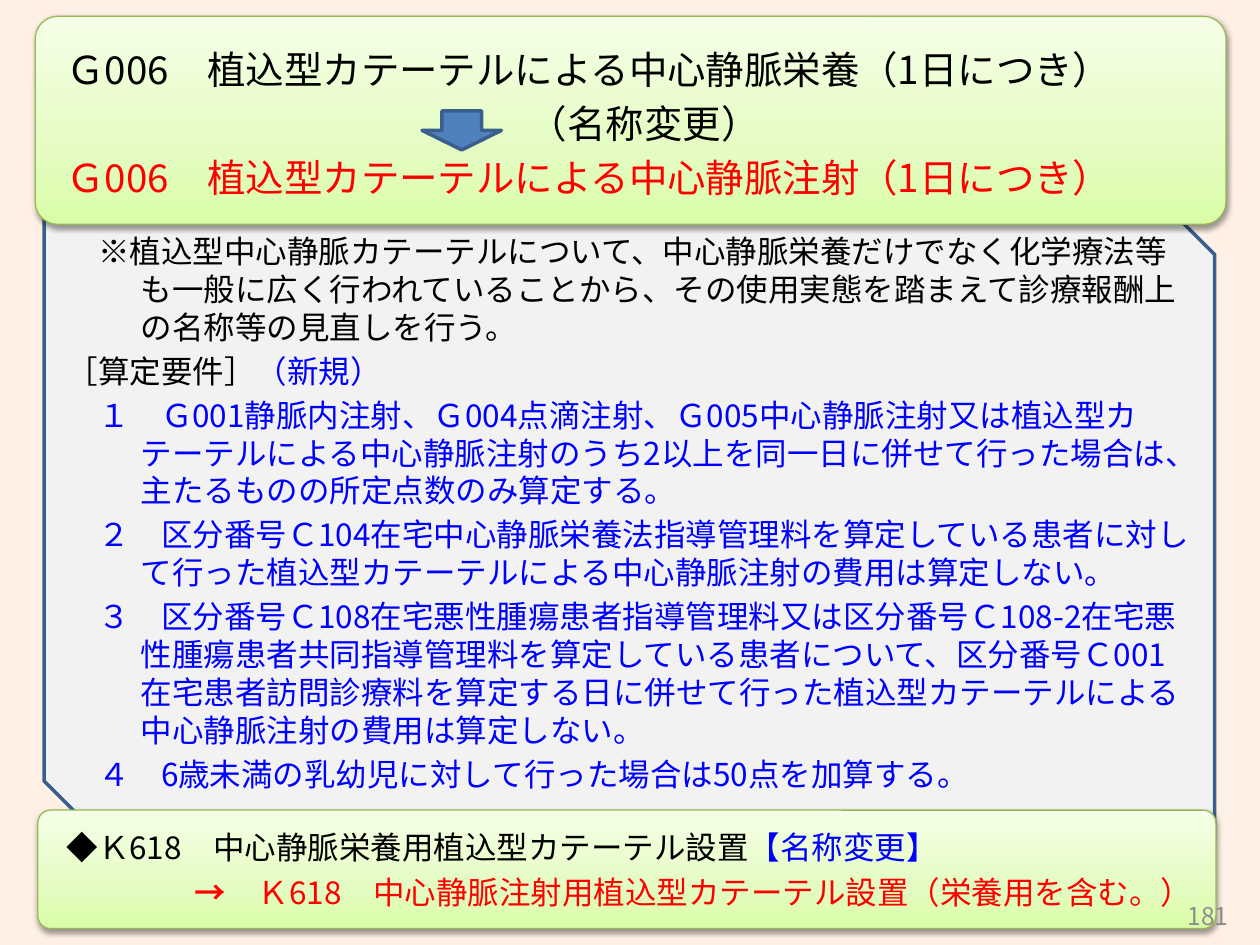
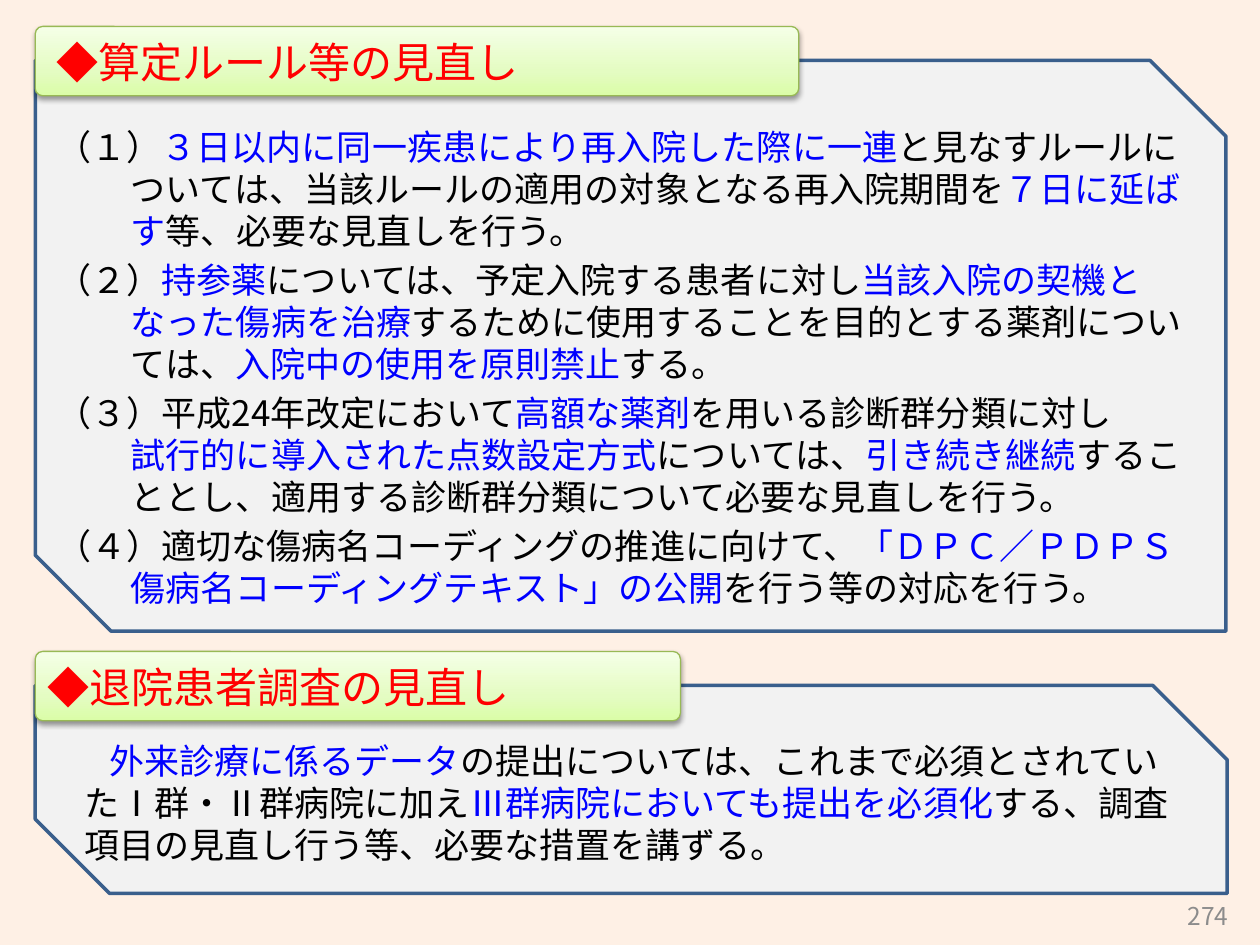
from pptx import Presentation
from pptx.dml.color import RGBColor
from pptx.enum.shapes import MSO_SHAPE
from pptx.enum.text import MSO_ANCHOR, PP_ALIGN
from pptx.oxml import parse_xml
from pptx.oxml.ns import nsdecls, qn
from pptx.util import Inches, Pt

SNIPPED = MSO_SHAPE.SNIP_2_DIAG_RECTANGLE
ROUNDED = MSO_SHAPE.ROUNDED_RECTANGLE
DOWN_ARROW = MSO_SHAPE.DOWN_ARROW
LEFT, RIGHT = PP_ALIGN.LEFT, PP_ALIGN.RIGHT
TOP, MIDDLE = MSO_ANCHOR.TOP, MSO_ANCHOR.MIDDLE

CREAM = RGBColor(0xFE, 0xF0, 0xE5)
PANEL_GRAY = RGBColor(0xF2, 0xF2, 0xF2)
NAVY = RGBColor(0x3A, 0x5F, 0x8C)
ARROW_BLUE = RGBColor(0x4F, 0x81, 0xBD)
LEAF = RGBColor(0x98, 0xB9, 0x55)
BLACK = RGBColor(0, 0, 0)
RED = RGBColor(0xFF, 0, 0)
BLUE = RGBColor(0, 0, 0xFF)
NUMBER_GRAY = RGBColor(0x8C, 0x8C, 0x8C)

FONT = "Noto Sans CJK JP"
GREEN_STOPS = ((0, "DAFDA7"), (35, "E4FCC2"), (100, "F5FFE7"))
LINE_HEIGHT = 1.2
PARA_GAP = 0.2


class Page:
    """The style of the deck and the slide being built."""

    def __init__(self, deck):
        self.slide = deck.slides.add_slide(deck.slide_layouts[6])
        background = self.slide.background.fill
        background.solid()
        background.fore_color.rgb = CREAM

    def shape(self, kind, at, line, line_width):
        shape = self.slide.shapes.add_shape(kind, *map(Inches, at))
        shape.shadow.inherit = False
        shape.line.color.rgb = line
        shape.line.width = Pt(line_width)
        return shape

    def solid(self, kind, at, color):
        shape = self.shape(kind, at, NAVY, 2)
        shape.fill.solid()
        shape.fill.fore_color.rgb = color
        return shape

    def panel(self, at, snip):
        panel = self.solid(SNIPPED, at, PANEL_GRAY)
        panel.adjustments[0] = 0
        panel.adjustments[1] = snip

    def band(self, at):
        """Rounded green gradient band with a soft shadow below it."""
        band = self.shape(ROUNDED, at, LEAF, 0.75)
        band.adjustments[0] = 0.108
        band.fill.gradient()
        band.fill.gradient_angle = 90
        properties = band._element.spPr
        stops = properties.find(".//" + qn("a:gsLst"))
        for stop in list(stops):
            stops.remove(stop)
        for position, color in GREEN_STOPS:
            stops.append(parse_xml(
                f'<a:gs {nsdecls("a")} pos="{position * 1000}">'
                f'<a:srgbClr val="{color}"/></a:gs>'))
        properties.find(qn("a:effectLst")).append(parse_xml(
            f'<a:outerShdw {nsdecls("a")} blurRad="{Pt(3.1)}" dist="{Pt(1.6)}" '
            'dir="5400000" rotWithShape="0"><a:srgbClr val="000000">'
            '<a:alpha val="38000"/></a:srgbClr></a:outerShdw>'))

    def text_box(self, at, anchor=TOP):
        box = self.slide.shapes.add_textbox(*map(Inches, at))
        box.text_frame.word_wrap = True
        box.text_frame.vertical_anchor = anchor
        return box.text_frame

    def para(self, frame, size, spans, margin=0.0, indent=0.0, before=None,
             after=0, align=LEFT):
        """Add a paragraph of (text, color[, bold]) spans; a span may end in a line break."""
        first = not frame.paragraphs[0].runs
        para = frame.paragraphs[0] if first else frame.add_paragraph()
        para.alignment = align
        para.line_spacing = Pt(size * LINE_HEIGHT)
        if before is None:
            before = 0 if first else size * PARA_GAP
        para.space_before = Pt(before)
        para.space_after = Pt(after)
        properties = para._p.get_or_add_pPr()
        properties.set("marL", str(Inches(margin)))
        properties.set("indent", str(Inches(indent)))
        for text, color, *bold in spans:
            span = para.add_run()
            span.text = text.rstrip("\n")
            span.font.size = Pt(size)
            span.font.name = FONT
            span.font.bold = bool(bold)
            span.font.color.rgb = color
            east_asian = parse_xml(f'<a:ea {nsdecls("a")} typeface="{FONT}"/>')
            span.font._element.find(qn("a:latin")).addnext(east_asian)
            if text.endswith("\n"):
                para.add_line_break()

    def number(self, number):
        frame = self.text_box((7.52, 7.07, 2.33, 0.4), MIDDLE)
        self.para(frame, 14, [(number, NUMBER_GRAY)], align=RIGHT)


def build_catheter_page(deck):
    page = Page(deck)
    page.panel((0.35, 1.55, 9.29, 5.12), 0.092)
    page.band((0.3, 6.43, 9.35, 0.94))
    page.band((0.28, 0.13, 9.45, 1.65))

    frame = page.text_box((0.43, 0.32, 9.13, 7.06))
    page.para(frame, 22, [("Ｇ006　植込型カテーテルによる中心静脈栄養（1日につき）", BLACK)], 0.4, -0.4)
    page.para(frame, 22, [("（名称変更）", BLACK)], 3.67)
    page.para(frame, 22, [("Ｇ006　植込型カテーテルによる中心静脈注射（1日につき）", RED)], 0.4, -0.4)

    page.para(frame, 18, [(
        "※植込型中心静脈カテーテルについて、中心静脈栄養だけでなく化学療法等も一般に広く"
        "行われていることから、その使用実態を踏まえて診療報酬上の名称等の見直しを行う。",
        BLACK)], 0.59, -0.34, before=18)
    page.para(frame, 18, [("［算定要件］", BLACK), ("（新規）", BLUE)], 0.59, -0.59)
    requirements = (
        "１　Ｇ001静脈内注射、Ｇ004点滴注射、Ｇ005中心静脈注射又は植込型カテーテルによる"
        "中心静脈注射のうち2以上を同一日に併せて行った場合は、主たるものの所定点数のみ算定する。",
        "２　区分番号Ｃ104在宅中心静脈栄養法指導管理料を算定している患者に対して行った"
        "植込型カテーテルによる中心静脈注射の費用は算定しない。",
        "３　区分番号Ｃ108在宅悪性腫瘍患者指導管理料又は区分番号Ｃ108-2在宅悪性腫瘍患者"
        "共同指導管理料を算定している患者について、区分番号Ｃ001在宅患者訪問診療料を算定する日に"
        "併せて行った植込型カテーテルによる中心静脈注射の費用は算定しない。",
        "４　6歳未満の乳幼児に対して行った場合は50点を加算する。",
    )
    for requirement in requirements:
        page.para(frame, 18, [(requirement, BLUE)], 0.59, -0.34)

    page.para(frame, 18, [("◆Ｋ618　中心静脈栄養用植込型カテーテル設置", BLACK),
                          ("【名称変更】", BLUE)], 0.59, -0.59, before=20.5)
    page.para(frame, 18, [("→　", RED, True),
                          ("Ｋ618　中心静脈注射用植込型カテーテル設置（栄養用を含む。）", RED)],
              0.59, -0.59, align=RIGHT)
    page.number("181")
    page.solid(DOWN_ARROW, (3.35, 0.88, 0.63, 0.31), ARROW_BLUE)


def build_rules_page(deck):
    page = Page(deck)
    page.panel((0.28, 5.44, 9.46, 1.65), 0.357)
    page.panel((0.28, 0.48, 9.45, 4.53), 0.133)
    page.band((0.28, 0.21, 6.06, 0.55))

    frame = page.text_box((0.35, 0.24, 9.21, 4.77))
    page.para(frame, 24, [("◆算定ルール等の見直し", RED)], 0.4, -0.4, after=18)
    rules = (
        [("（１）", BLACK),
         ("３日以内に同一疾患により再入院した際に一連", BLUE),
         ("と見なすルールについては、当該ルールの適用の対象となる再入院期間を", BLACK),
         ("７日に延ばす", BLUE),
         ("等、必要な見直しを行う。", BLACK)],
        [("（２）", BLACK),
         ("持参薬", BLUE),
         ("については、予定入院する患者に対し", BLACK),
         ("当該入院の契機となった傷病を治療", BLUE),
         ("するために使用することを目的とする薬剤については、", BLACK),
         ("入院中の使用を原則禁止", BLUE),
         ("する。", BLACK)],
        [("（３）平成24年改定において", BLACK),
         ("高額な薬剤", BLUE),
         ("を用いる診断群分類に対し\n", BLACK),
         ("試行的に導入された点数設定方式", BLUE),
         ("については、", BLACK),
         ("引き続き継続", BLUE),
         ("することとし、適用する診断群分類について必要な見直しを行う。", BLACK)],
        [("（４）適切な傷病名コーディングの推進に向けて、", BLACK),
         ("「ＤＰＣ／ＰＤＰＳ傷病名コーディングテキスト」の公開", BLUE),
         ("を行う等の対応を行う。", BLACK)],
    )
    for rule in rules:
        page.para(frame, 20, rule, 0.59, -0.59)

    page.band((0.28, 5.17, 5.12, 0.55))
    frame = page.text_box((0.28, 5.2, 9.21, 1.9))
    page.para(frame, 24, [("◆退院患者調査の見直し", RED)], 0.4, -0.4, after=12)
    page.para(frame, 20, [
        ("外来診療に係るデータ", BLUE),
        ("の提出については、これまで必須とされていたⅠ群・Ⅱ群病院に加え", BLACK),
        ("Ⅲ群病院においても提出を必須化", BLUE),
        ("する、調査項目の見直し行う等、必要な措置を講ずる。", BLACK)], 0.29, 0.2)
    page.number("274")


def main():
    deck = Presentation()
    deck.slide_width, deck.slide_height = Inches(10), Inches(7.5)
    build_catheter_page(deck)
    build_rules_page(deck)
    deck.save("out.pptx")


if __name__ == "__main__":
    main()
